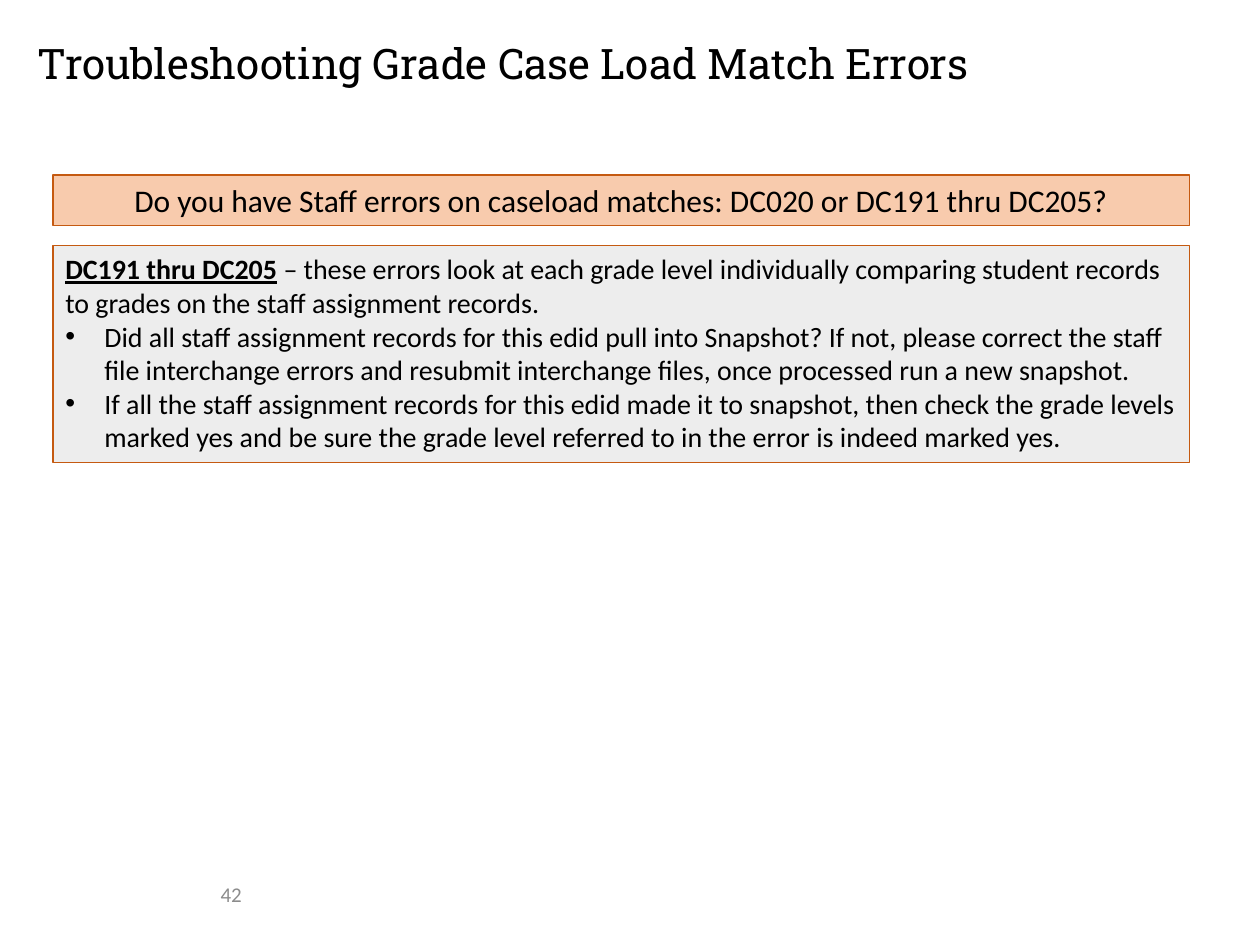
from lxml.etree import SubElement
from pptx import Presentation
from pptx.dml.color import RGBColor
from pptx.enum.shapes import MSO_SHAPE
from pptx.enum.text import MSO_ANCHOR, PP_ALIGN
from pptx.oxml.ns import qn
from pptx.util import Inches, Pt

BLACK = RGBColor(0x00, 0x00, 0x00)
GREY = RGBColor(0x8C, 0x8C, 0x8C)
PEACH = RGBColor(0xF8, 0xCB, 0xAD)
PALE = RGBColor(0xED, 0xED, 0xED)
RUST = RGBColor(0xC5, 0x5A, 0x11)

# Content
TITLE = "Troubleshooting Grade Case Load Match Errors"
ASK = "Do you have Staff errors on caseload matches: DC020 or DC191 thru DC205?"
CODES = "DC191 thru DC205"
INTRO = (" – these errors look at each grade level individually comparing "
         "student records to grades on the staff assignment records.")
CHECKS = [
    "Did all staff assignment records for this edid pull into Snapshot? "
    "If not, please correct the staff file interchange errors and resubmit "
    "interchange files, once processed run a new snapshot.",
    "If all the staff assignment records for this edid made it to snapshot, "
    "then check the grade levels marked yes and be sure the grade level "
    "referred to in the error is indeed marked yes.",
]
PAGE = "42"

# Layout
LEFT, WIDTH = 0.42, 9.02
INDENT = Inches(0.31)


def add_run(para, text, size, color=BLACK, face="Calibri", strong=False):
    run = para.add_run()
    run.text = text
    font = run.font
    font.size, font.name = Pt(size), face
    font.color.rgb = color
    font.bold = font.underline = strong


def add_bullet(para):
    props = para._p.get_or_add_pPr()
    props.set("marL", str(INDENT))
    props.set("indent", str(-INDENT))
    SubElement(props, qn("a:buFont"), typeface="Arial")
    SubElement(props, qn("a:buChar"), char="•")


def add_panel(slide, top, height, fill, align):
    box = slide.shapes.add_shape(MSO_SHAPE.RECTANGLE, Inches(LEFT), Inches(top),
                                 Inches(WIDTH), Inches(height))
    box.shadow.inherit = False
    box.fill.solid()
    box.fill.fore_color.rgb = fill
    box.line.color.rgb = RUST
    box.line.width = Pt(0.75)
    frame = box.text_frame
    frame.word_wrap = True
    frame.vertical_anchor = MSO_ANCHOR.TOP
    frame.paragraphs[0].alignment = align
    return frame


def main():
    deck = Presentation()
    deck.slide_width, deck.slide_height = Inches(10), Inches(7.5)
    slide = deck.slides.add_slide(deck.slide_layouts[5])

    # Title
    title = slide.shapes.title
    title.left, title.top = Inches(0.3), Inches(0.3)
    title.width, title.height = Inches(8.62), Inches(0.78)
    frame = title.text_frame
    frame.margin_left = frame.margin_right = 0
    frame.margin_top = frame.margin_bottom = 0
    frame.vertical_anchor = MSO_ANCHOR.TOP
    frame.paragraphs[0].alignment = PP_ALIGN.LEFT
    add_run(frame.paragraphs[0], TITLE, 24, face="Roboto Slab")

    # Page number
    note = slide.shapes.add_textbox(0, Inches(6.95), Inches(3.67), Inches(0.3))
    frame = note.text_frame
    frame.word_wrap = True
    frame.vertical_anchor = MSO_ANCHOR.MIDDLE
    frame.paragraphs[0].alignment = PP_ALIGN.CENTER
    add_run(frame.paragraphs[0], PAGE, 12, GREY)

    # Question banner
    frame = add_panel(slide, 1.39, 0.4, PEACH, PP_ALIGN.CENTER)
    add_run(frame.paragraphs[0], ASK, 18)

    # Error guidance
    frame = add_panel(slide, 1.95, 1.72, PALE, PP_ALIGN.LEFT)
    add_run(frame.paragraphs[0], CODES, 16, strong=True)
    add_run(frame.paragraphs[0], INTRO, 16)
    for check in CHECKS:
        para = frame.add_paragraph()
        para.alignment = PP_ALIGN.LEFT
        add_bullet(para)
        add_run(para, check, 16)

    deck.save("out.pptx")


if __name__ == "__main__":
    main()
